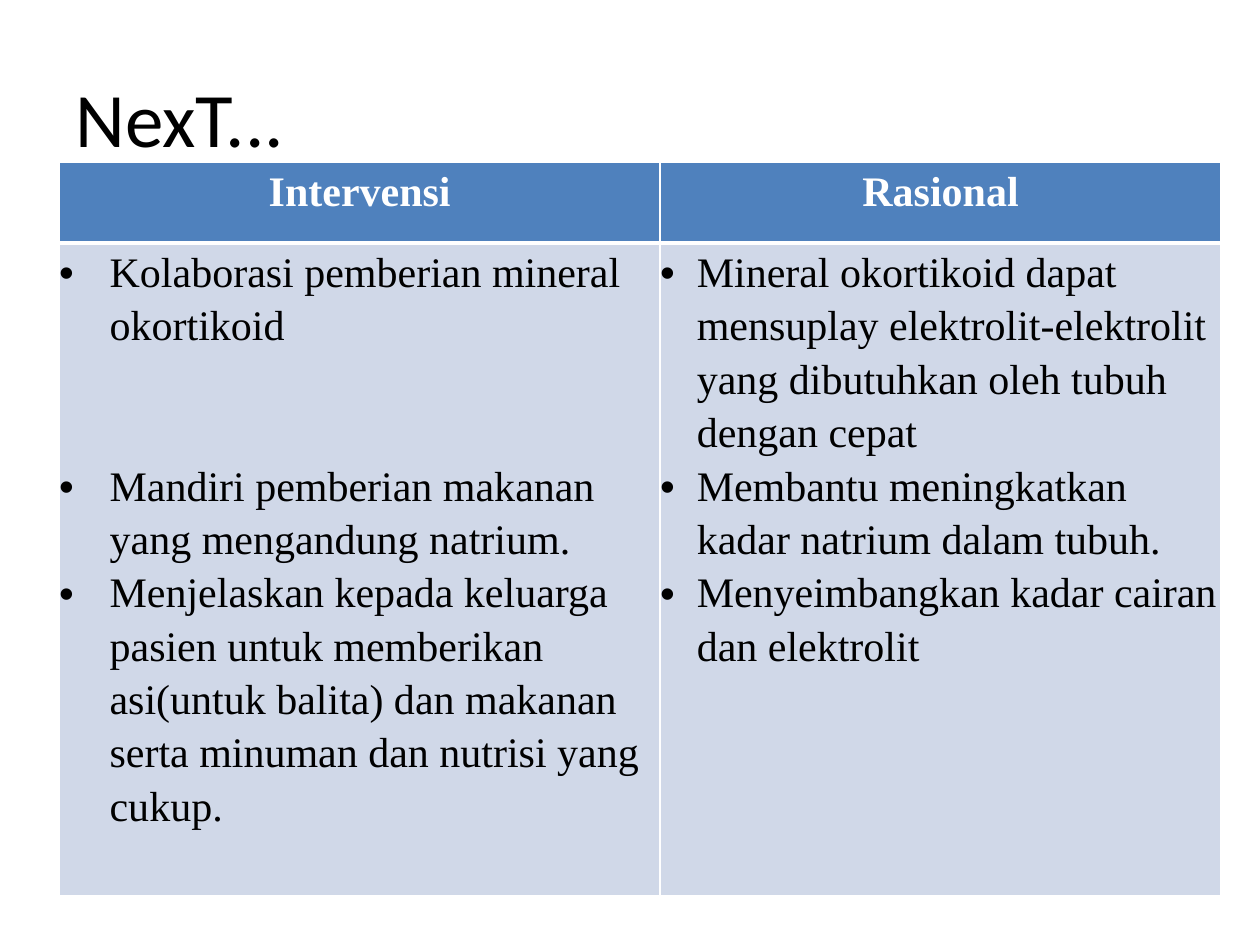
"""Build a slide with a two-column table of interventions and their rationale."""
import pptx
import pptx.dml.color
import pptx.enum.text
import pptx.oxml
import pptx.oxml.ns
import pptx.util

Inches, Pt = pptx.util.Inches, pptx.util.Pt
ALIGN = pptx.enum.text.PP_ALIGN
COLORS = {"text": "000000", "line": "FFFFFF", "header": "4F81BD", "body": "D0D8E8"}
COLUMNS = [
    {"head": "Intervensi", "width": 4.77, "indent": 0.4, "gaps": [61, 0, 0],
     "items": ["Kolaborasi pemberian mineral okortikoid",
               "Mandiri pemberian makanan yang mengandung natrium.",
               "Menjelaskan kepada keluarga pasien untuk memberikan asi(untuk balita) "
               "dan makanan serta minuman dan nutrisi yang cukup."]},
    {"head": "Rasional", "width": 4.45, "indent": 0.29, "gaps": [0, 0, 0],
     "items": ["Mineral okortikoid dapat mensuplay elektrolit-elektrolit "
               "yang dibutuhkan oleh tubuh dengan cepat",
               "Membantu meningkatkan kadar natrium dalam tubuh.",
               "Menyeimbangkan kadar cairan dan elektrolit"]},
]
ROW_HEIGHTS = [0.64, 5.18]


def style_cell(cell, fill, top, bottom):
    """Set the margins, white borders and fill of a cell."""
    cell.margin_left = cell.margin_right = cell.margin_top = cell.margin_bottom = 0
    properties = cell._tc.get_or_add_tcPr()
    for side, width in {"L": 1, "R": 1, "T": top, "B": bottom}.items():
        properties.append(pptx.oxml.parse_xml(
            f'<a:ln{side} {pptx.oxml.ns.nsdecls("a")} w="{Pt(width)}"><a:solidFill>'
            f'<a:srgbClr val="{COLORS["line"]}"/></a:solidFill></a:ln{side}>'))
    cell.fill.solid()
    cell.fill.fore_color.rgb = pptx.dml.color.RGBColor.from_string(COLORS[fill])


def write(para, text, color, size=24, font="Times New Roman", bold=False):
    """Fill a paragraph and format its run."""
    para.text = text
    span = para.runs[0]
    span.font.name, span.font.size, span.font.bold = font, Pt(size), bold
    span.font.color.rgb = pptx.dml.color.RGBColor.from_string(COLORS[color])


deck = pptx.Presentation()
deck.slide_width, deck.slide_height = Inches(10), Inches(7.5)
page = deck.slides.add_slide(deck.slide_layouts[5])

title = page.shapes.title
title.left, title.top, title.width, title.height = map(Inches, (0.5, 0.3, 9, 1.25))
title.text_frame.vertical_anchor = pptx.enum.text.MSO_ANCHOR.MIDDLE
write(title.text_frame.paragraphs[0], "NexT...", "text", 44, "Calibri")
title.text_frame.paragraphs[0].alignment = ALIGN.JUSTIFY

table = page.shapes.add_table(
    len(ROW_HEIGHTS), len(COLUMNS), Inches(0.47), Inches(1.29),
    Inches(sum(column["width"] for column in COLUMNS)), Inches(sum(ROW_HEIGHTS))).table
table.horz_banding = False
for row, height in zip(table.rows, ROW_HEIGHTS):
    row.height = Inches(height)

for index, column in enumerate(COLUMNS):
    table.columns[index].width = Inches(column["width"])
    header, body = table.cell(0, index), table.cell(1, index)
    style_cell(header, "header", 1, 3)
    style_cell(body, "body", 3, 1)

    para = header.text_frame.paragraphs[0]
    write(para, column["head"], "line", bold=True)
    para.alignment, para.line_spacing, para.space_after = ALIGN.CENTER, 1.15, Pt(10)

    body.text_frame.text = "\n".join(column["items"])
    for para, gap in zip(body.text_frame.paragraphs, column["gaps"]):
        write(para, para.text, "text")
        para.line_spacing, para.space_after = 1.15, Pt(gap)
        properties = para._p.get_or_add_pPr()
        properties.set("marL", str(Inches(column["indent"])))
        properties.set("indent", str(-Inches(column["indent"])))
        for bullet in ('buFont {} typeface="Arial"', 'buChar {} char="•"'):
            properties.append(pptx.oxml.parse_xml(
                f'<a:{bullet.format(pptx.oxml.ns.nsdecls("a"))}/>'))

deck.save("out.pptx")
